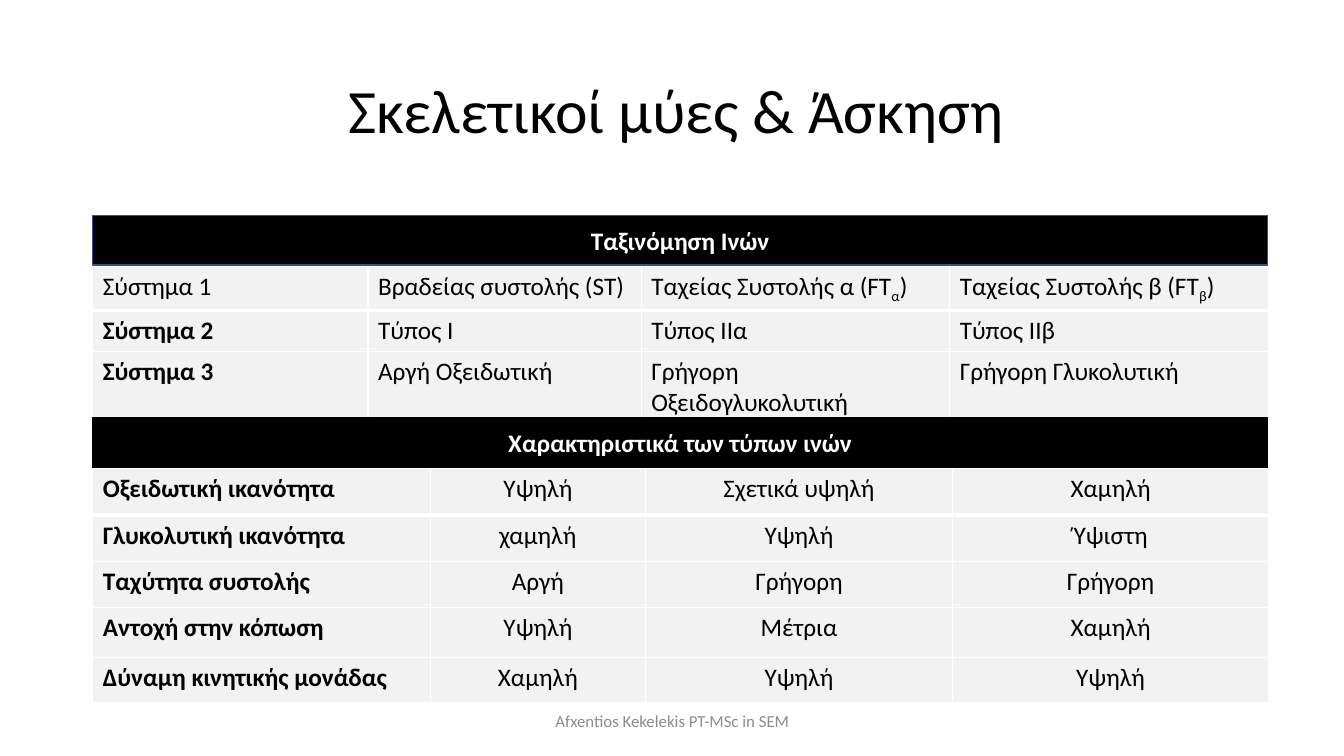
from lxml.etree import SubElement
from pptx import Presentation
from pptx.dml.color import RGBColor
from pptx.enum.shapes import MSO_SHAPE
from pptx.enum.text import MSO_ANCHOR, PP_ALIGN
from pptx.oxml.ns import qn
from pptx.util import Inches, Pt

BLACK = RGBColor(0x00, 0x00, 0x00)
WHITE = RGBColor(0xFF, 0xFF, 0xFF)
NAVY = RGBColor(0x32, 0x54, 0x91)
PALE = RGBColor(0xF2, 0xF2, 0xF2)
GREY = RGBColor(0x8C, 0x8C, 0x8C)
FONT = "Calibri"
LEFT, WIDTH = 0.92, 11.65

FIBRE_SYSTEMS = [
    ["Σύστημα 1", "Βραδείας συστολής (ST)", ("Ταχείας Συστολής α (FΤ", "α", ")"),
     ("Ταχείας Συστολής β (FT", "β", ")")],
    ["Σύστημα 2", "Τύπος Ι", "Τύπος ΙΙα", "Τύπος ΙΙβ"],
    ["Σύστημα 3", "Αργή Οξειδωτική", "Γρήγορη Οξειδογλυκολυτική",
     "Γρήγορη Γλυκολυτική"],
]
FIBRE_TRAITS = [
    ["Οξειδωτική ικανότητα", "Υψηλή", "Σχετικά υψηλή", "Χαμηλή"],
    ["Γλυκολυτική ικανότητα", "χαμηλή", "Υψηλή", "Ύψιστη"],
    ["Ταχύτητα συστολής", "Αργή", "Γρήγορη", "Γρήγορη"],
    ["Αντοχή στην κόπωση", "Υψηλή", "Μέτρια", "Χαμηλή"],
    ["Δύναμη κινητικής μονάδας", "Χαμηλή", "Υψηλή", "Υψηλή"],
]


def add_run(paragraph, text, size=18, color=BLACK, bold=False):
    run = paragraph.add_run()
    run.text = text
    run.font.name = FONT
    run.font.size = Pt(size)
    run.font.bold = bold
    run.font.color.rgb = color
    return run


def fill_frame(frame, text, size, color, bold=False):
    frame.word_wrap = True
    frame.vertical_anchor = MSO_ANCHOR.MIDDLE
    paragraph = frame.paragraphs[0]
    paragraph.alignment = PP_ALIGN.CENTER
    add_run(paragraph, text, size, color, bold)
    return paragraph


def set_title(slide, text):
    title = slide.shapes.title
    title.left, title.top = Inches(1), Inches(0.4)
    title.width, title.height = Inches(11.42), Inches(1.45)
    fill_frame(title.text_frame, text, 44, BLACK).line_spacing = 0.9


def add_band(slide, text, top, height, outline):
    band = slide.shapes.add_shape(MSO_SHAPE.RECTANGLE, Inches(LEFT), Inches(top),
                                  Inches(WIDTH), Inches(height))
    band.shadow.inherit = False
    band.fill.solid()
    band.fill.fore_color.rgb = BLACK
    band.line.color.rgb = outline
    band.line.width = Pt(1)
    fill_frame(band.text_frame, text, 18, WHITE, True)


def set_borders(cell, bottom):
    properties = cell._tc.get_or_add_tcPr()
    for side, points in (("L", 1), ("R", 1), ("T", 1), ("B", bottom)):
        border = SubElement(properties, qn(f"a:ln{side}"), w=str(Pt(points)))
        solid = SubElement(border, qn("a:solidFill"))
        SubElement(solid, qn("a:srgbClr"), val=str(WHITE))


def fill_cell(cell, content, bold, alignment, bottom):
    set_borders(cell, bottom)
    cell.fill.solid()
    cell.fill.fore_color.rgb = PALE
    paragraph = cell.text_frame.paragraphs[0]
    paragraph.alignment = alignment
    parts = (content,) if isinstance(content, str) else content
    for index, part in enumerate(parts):
        run = add_run(paragraph, part, bold=bold)
        if index == 1:
            run.font._element.set("baseline", "-25000")


def add_fibre_table(slide, rows, top, widths, heights, value_alignment, plain_labels=()):
    frame = slide.shapes.add_table(len(rows), len(widths), Inches(LEFT), Inches(top),
                                   Inches(WIDTH), Inches(sum(heights)))
    table = frame.table
    table.first_row = False
    table.horz_banding = False
    for column, width in zip(table.columns, widths):
        column.width = Inches(width)
    for r, (row, height) in enumerate(zip(rows, heights)):
        table.rows[r].height = Inches(height)
        for c, content in enumerate(row):
            is_label = c == 0
            fill_cell(table.cell(r, c), content,
                      is_label and content not in plain_labels,
                      PP_ALIGN.LEFT if is_label else value_alignment,
                      3 if r == 0 else 1)


def add_credit(slide, text):
    credit = slide.shapes.add_textbox(Inches(4.42), Inches(6.95), Inches(4.5), Inches(0.4))
    fill_frame(credit.text_frame, text, 12, GREY)


def main():
    presentation = Presentation()
    presentation.slide_width = Inches(13.33)
    presentation.slide_height = Inches(7.5)
    slide = presentation.slides.add_slide(presentation.slide_layouts[5])
    set_title(slide, "Σκελετικοί μύες & Άσκηση")
    add_band(slide, "Ταξινόμηση Ινών", 2.14, 0.49, NAVY)
    add_fibre_table(slide, FIBRE_SYSTEMS, 2.64, [2.73, 2.71, 3.06, 3.16],
                    [0.37, 0.37, 0.69], PP_ALIGN.LEFT, ["Σύστημα 1"])
    add_band(slide, "Χαρακτηριστικά των τύπων ινών", 4.14, 0.5, BLACK)
    add_fibre_table(slide, FIBRE_TRAITS, 4.65, [3.35, 2.13, 3.05, 3.13],
                    [0.46, 0.46, 0.46, 0.49, 0.45], PP_ALIGN.CENTER)
    add_credit(slide, "Afxentios Kekelekis PT-MSc in SEM")
    presentation.save("out.pptx")


if __name__ == "__main__":
    main()
